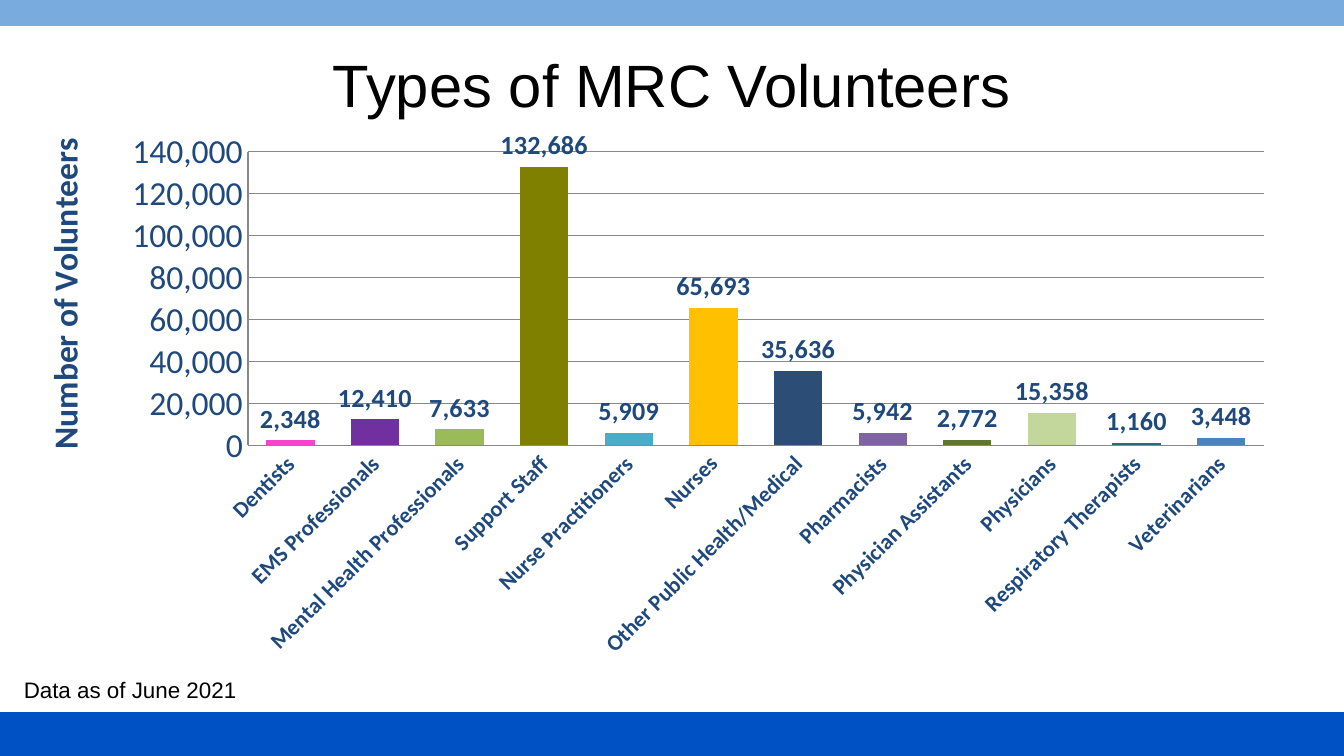
from lxml.etree import SubElement
from pptx import Presentation
from pptx.chart.data import CategoryChartData
from pptx.dml.color import RGBColor
from pptx.enum.chart import XL_CHART_TYPE, XL_LABEL_POSITION, XL_TICK_MARK
from pptx.enum.shapes import MSO_SHAPE
from pptx.enum.text import MSO_ANCHOR, PP_ALIGN
from pptx.oxml import parse_xml
from pptx.oxml.ns import nsdecls, qn
from pptx.util import Cm, Pt

# Content
TITLE = "Types of MRC Volunteers"
NOTE = "Data as of June 2021"
AXIS_TITLE = "Number of Volunteers"
VOLUNTEERS = [  # type, count, bar colour
    ("Dentists", 2348, "F145CC"),
    ("EMS Professionals", 12410, "7030A0"),
    ("Mental Health Professionals", 7633, "9BBB59"),
    ("Support Staff", 132686, "808000"),
    ("Nurse Practitioners", 5909, "4BACC6"),
    ("Nurses", 65693, "FFC000"),
    ("Other Public Health/Medical", 35636, "2C4D75"),
    ("Pharmacists", 5942, "8064A2"),
    ("Physician Assistants", 2772, "5F7530"),
    ("Physicians", 15358, "C3D69B"),
    ("Respiratory Therapists", 1160, "276A7C"),
    ("Veterinarians", 3448, "4F81BD"),
]
COLORS = {"top": "7AABDE", "bottom": "0051C4", "text": "000000",
          "chart": "1F497D", "line": "888888"}
WIDTH, HEIGHT = 25.4, 14.29


def rgb(name):
    return RGBColor.from_string(COLORS[name])


def style_font(font, size, color, name="Calibri", bold=False):
    font.size, font.name, font.bold = Pt(size), name, bold
    font.color.rgb = rgb(color)


def add_band(slide, top, height, color):
    band = slide.shapes.add_shape(MSO_SHAPE.RECTANGLE, 0, Cm(top), Cm(WIDTH), Cm(height))
    band.shadow.inherit = False
    band.fill.solid()
    band.fill.fore_color.rgb = rgb(color)
    band.line.color.rgb = rgb(color)
    band.line.width = Pt(2)


def add_text(slide, text, box, size, align, anchor, wrap):
    frame = slide.shapes.add_textbox(*(Cm(length) for length in box)).text_frame
    frame.word_wrap, frame.vertical_anchor = wrap, anchor
    paragraph = frame.paragraphs[0]
    paragraph.alignment = align
    run = paragraph.add_run()
    run.text = text
    style_font(run.font, size, "text", "Arial")


def set_layout(parent, index, **settings):
    """Place a chart part by fractions of the chart area."""
    for old in parent.findall(qn("c:layout")):
        parent.remove(old)
    layout = parse_xml(f"<c:layout {nsdecls('c')}><c:manualLayout/></c:layout>")
    for tag, value in settings.items():
        SubElement(layout[0], qn(f"c:{tag}")).set("val", str(value))
    parent.insert(index, layout)


def style_line(line):
    line.color.rgb = rgb("line")
    line.width = Pt(0.75)


def add_chart(slide):
    data = CategoryChartData(number_format="#,##0")
    data.categories = [kind for kind, _, _ in VOLUNTEERS]
    data.add_series("Series 1", [count for _, count, _ in VOLUNTEERS])
    chart = slide.shapes.add_chart(XL_CHART_TYPE.COLUMN_CLUSTERED, Cm(0.43), Cm(2.29),
                                   Cm(23.93), Cm(10.36), data).chart
    chart.has_legend = chart.has_title = False
    style_font(chart.font, 18, "text")

    # Bars and their labels
    plot = chart.plots[0]
    plot.vary_by_categories = False
    plot.gap_width, plot.overlap = 75, 40
    for index, (_, _, color) in enumerate(VOLUNTEERS):
        fill = plot.series[0].points[index].format.fill
        fill.solid()
        fill.fore_color.rgb = RGBColor.from_string(color)
    plot.has_data_labels = True
    labels = plot.data_labels
    labels.show_value = True
    labels.position = XL_LABEL_POSITION.OUTSIDE_END
    labels.number_format, labels.number_format_is_linked = "#,##0", False
    style_font(labels.font, 14, "chart", bold=True)

    # Axes
    categories, values = chart.category_axis, chart.value_axis
    for axis, size, bold in ((categories, 12, True), (values, 18, False)):
        axis.major_tick_mark = axis.minor_tick_mark = XL_TICK_MARK.NONE
        style_font(axis.tick_labels.font, size, "chart", bold=bold)
        style_line(axis.format.line)
    categories._element.find(qn("c:txPr")).find(qn("a:bodyPr")).set("rot", "-2700000")
    values.minimum_scale, values.maximum_scale, values.major_unit = 0, 140000, 20000
    values.tick_labels.number_format = "#,##0"
    values.tick_labels.number_format_is_linked = False
    values.has_major_gridlines = True
    style_line(values.major_gridlines.format.line)

    # Axis title
    frame = values.axis_title.text_frame
    run = frame.paragraphs[0].add_run()
    run.text = AXIS_TITLE
    style_font(run.font, 18, "chart", bold=True)
    body = frame._txBody.find(qn("a:bodyPr"))
    body.set("rot", "-5400000")
    body.set("vert", "horz")

    set_layout(values.axis_title._element, 1, xMode="edge", yMode="edge", x=0.01, y=0.02)
    plot_area = chart._chartSpace.find(qn("c:chart")).find(qn("c:plotArea"))
    set_layout(plot_area, 0, layoutTarget="inner", xMode="edge", yMode="edge",
               x=0.178, y=0.056, w=0.802, h=0.536)


def main():
    presentation = Presentation()
    presentation.slide_width, presentation.slide_height = Cm(WIDTH), Cm(HEIGHT)
    slide = presentation.slides.add_slide(presentation.slide_layouts[6])
    add_band(slide, 13.49, 0.8, "bottom")
    add_band(slide, -0.05, 0.5, "top")
    add_text(slide, TITLE, (1.27, 0.38, 22.86, 2.39), 32, PP_ALIGN.CENTER,
             MSO_ANCHOR.MIDDLE, True)
    add_text(slide, NOTE, (0.2, 12.65, 4.57, 0.76), 12, PP_ALIGN.LEFT, MSO_ANCHOR.TOP, False)
    add_chart(slide)
    presentation.save("out.pptx")


if __name__ == "__main__":
    main()
